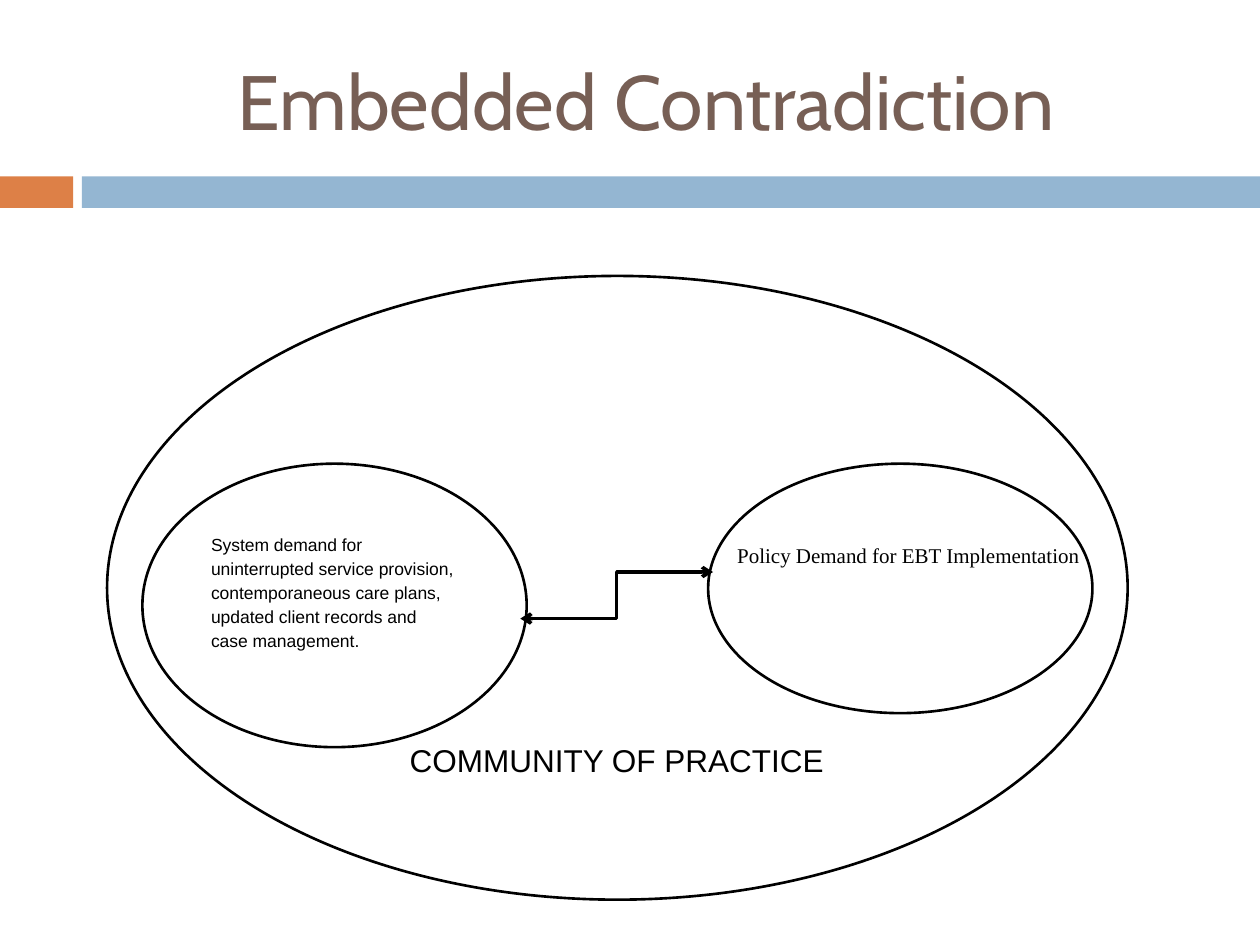
from lxml import etree
from pptx import Presentation
from pptx.dml.color import RGBColor
from pptx.enum import shapes, text
from pptx.oxml.ns import qn
from pptx.util import Inches, Pt

THEME = {
    "orange": "DD8047", "blue": "94B6D2", "brown": "775F55", "ink": "000000",
    "title": {"name": "Cabin", "size": Pt(44)},
    "community": {"name": "Arial", "size": Pt(18)},
    "system": {"name": "Arial", "size": Pt(10)},
    "policy": {"name": "Times New Roman", "size": Pt(12)},
    "outline": Pt(1.5), "arrow": Pt(2),
}

TITLE = ("Embedded Contradiction", (0.67, 0.25, 8.92, 1.08))
BANDS = [("orange", (0, 1.4, 0.58, 0.25)), ("blue", (0.65, 1.4, 9.35, 0.25))]
COMMUNITY_OVAL = (0.85, 2.19, 8.1, 4.95)
POLICY_OVAL = (5.62, 3.68, 3.05, 1.98)
SYSTEM_OVAL = (1.13, 3.68, 3.05, 2.25)
SYSTEM_TEXT = ("System demand for uninterrupted service provision, contemporaneous "
               "care plans, updated client records and case management.")
LABELS = [
    ("COMMUNITY OF PRACTICE", "community", (2.49, 5.79, 4.81, 1.2)),
    ("Policy Demand for EBT Implementation", "policy", (5.74, 4.23, 2.94, 1.03)),
]
ARROW = (4.13, 4.91, 5.66, 4.54)


def inches(values):
    return [Inches(v) for v in values]


def rgb(name):
    return RGBColor.from_string(THEME[name])


def write(sp, words, style, align, color="ink", spacing=1.15, **frame):
    tf = sp.text_frame
    frame = {"word_wrap": True, "vertical_anchor": text.MSO_ANCHOR.TOP, **frame}
    for key, value in frame.items():
        setattr(tf, key, value)
    p = tf.paragraphs[0]
    p.alignment, p.line_spacing = align, spacing
    r = p.add_run()
    r.text = words
    for key, value in THEME[style].items():
        setattr(r.font, key, value)
    r.font.color.rgb = rgb(color)


def add_band(slide, color, box):
    sp = slide.shapes.add_shape(shapes.MSO_SHAPE.RECTANGLE, *inches(box))
    sp.shadow.inherit = False
    sp.fill.solid()
    sp.fill.fore_color.rgb = rgb(color)
    sp.line.fill.background()


def add_oval(slide, box):
    sp = slide.shapes.add_shape(shapes.MSO_SHAPE.OVAL, *inches(box))
    sp.shadow.inherit = False
    sp.fill.background()
    sp.line.color.rgb = rgb("ink")
    sp.line.width = THEME["outline"]
    return sp


def add_double_arrow(slide, ends):
    sp = slide.shapes.add_connector(shapes.MSO_CONNECTOR.ELBOW, *inches(ends))
    sp.line.color.rgb = rgb("ink")
    sp.line.width = THEME["arrow"]
    ln = sp.line._get_or_add_ln()
    for tag in ("a:headEnd", "a:tailEnd"):
        etree.SubElement(ln, qn(tag), type="arrow")
    etree.SubElement(sp._element.spPr, qn("a:effectLst"))


def main():
    prs = Presentation()
    prs.slide_width, prs.slide_height = Inches(10), Inches(7.5)
    slide = prs.slides.add_slide(prs.slide_layouts[5])
    center, left = text.PP_ALIGN.CENTER, text.PP_ALIGN.LEFT
    middle = text.MSO_ANCHOR.MIDDLE

    for band in BANDS:
        add_band(slide, *band)

    words, box = TITLE
    title = slide.shapes.title
    title.left, title.top, title.width, title.height = inches(box)
    write(title, words, "title", center, "brown", 1.0, vertical_anchor=middle)

    add_oval(slide, COMMUNITY_OVAL)
    add_oval(slide, POLICY_OVAL)
    add_double_arrow(slide, ARROW)
    # The larger bottom margin lifts the text above the middle of the oval.
    write(add_oval(slide, SYSTEM_OVAL), SYSTEM_TEXT, "system", left,
          vertical_anchor=middle, margin_bottom=Inches(0.28))
    for words, style, box in LABELS:
        write(slide.shapes.add_textbox(*inches(box)), words, style, center)

    prs.save("out.pptx")


if __name__ == "__main__":
    main()
